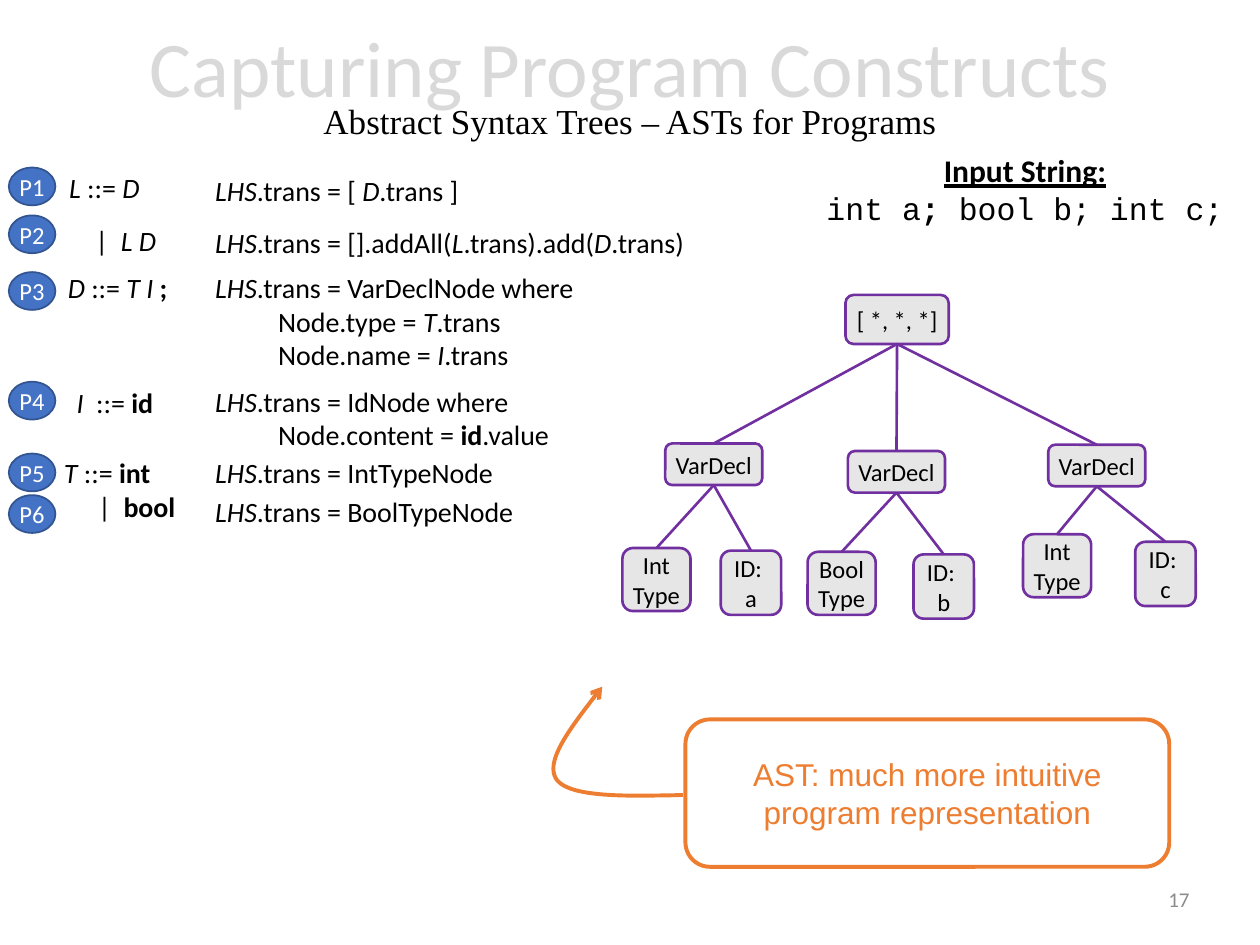
from pptx import Presentation
from pptx.dml.color import RGBColor
from pptx.enum.shapes import MSO_CONNECTOR, MSO_SHAPE
from pptx.enum.text import MSO_ANCHOR, PP_ALIGN
from pptx.oxml.ns import qn
from pptx.util import Inches, Pt
from lxml import etree

BLACK = RGBColor(0, 0, 0)
WHITE = RGBColor(255, 255, 255)
PALE = RGBColor(0xD9, 0xD9, 0xD9)
GRAY = RGBColor(0x8C, 0x8C, 0x8C)
SILVER = RGBColor(0xE7, 0xE6, 0xE6)
PURPLE = RGBColor(0x70, 0x30, 0xA0)
BLUE = RGBColor(0x44, 0x72, 0xC4)
NAVY = RGBColor(0x32, 0x54, 0x91)
ORANGE = RGBColor(0xED, 0x7D, 0x31)

LEFT, MID, RIGHT = PP_ALIGN.LEFT, PP_ALIGN.CENTER, PP_ALIGN.RIGHT
TOP, MIDDLE = MSO_ANCHOR.TOP, MSO_ANCHOR.MIDDLE
ROUND, OVAL = MSO_SHAPE.ROUNDED_RECTANGLE, MSO_SHAPE.OVAL
STRAIGHT = MSO_CONNECTOR.STRAIGHT

COLS, ROWS = 100, 75
CELL = Inches(0.1)

BADGES = [12, 15.8, 20.3, 29, 34.7, 38]
RULES = [
    (3.8, 12.1, "_L_ ::= _D_", 26),
    (5.9, 16.3, "|  _L D_", 26),
    (3.7, 21, "_D_ ::= _T I_~ ;~", None),
    (4.4, 30.1, "_I  _::= ~id~", None),
    (3.4, 35.7, "_T _::= ~int~\n>|  ~bool~", None),
]
ACTIONS = [
    (12.3, "[ _D_.trans ]", 26),
    (16.5, "[].addAll(_L_.trans).add(_D_.trans)", 26),
    (21, "VarDeclNode where\n>Node.type = _T_.trans\n>Node.name = _I_.trans", None),
    (30, "IdNode where\n>Node.content = ~id~.value", None),
    (35.7, "IntTypeNode", None),
    (38.8, "BoolTypeNode", None),
]
DECLS = [
    ((3.4, 11.8), ("Int", 0, 20.1), ("a", 7.8, 20.3)),
    ((17.9, 12.4), ("Bool", 14.7, 20.4), ("b", 23.1, 20.6)),
    ((33.8, 11.9), ("Int", 31.8, 19), ("c", 40.7, 19.6)),
]


def cells(*nums):
    """Turn grid counts into lengths."""
    return [round(n * CELL) for n in nums]


def write(frame, text, font="Calibri", size=16, color=BLACK, align=LEFT,
          bold=False, under=False, space=None, indent=0):
    """Append lines, with _italic_, ~bold~ and a leading > for an indent."""
    for line in text.split("\n"):
        par = frame.add_paragraph() if frame.text else frame.paragraphs[0]
        par.alignment = align
        if space:
            par.line_spacing = space
        if line.startswith(">"):
            line = line[1:]
            props = par._p.get_or_add_pPr()
            props.set("marL", str(round(indent * CELL)))
            props.set("indent", "0")
        for i, part in enumerate(line.split("_")):
            for j, bit in enumerate(part.split("~")):
                if bit:
                    run = par.add_run()
                    run.text = bit
                    run.font.name, run.font.size = font, Pt(size)
                    run.font.color.rgb = color
                    run.font.italic = i % 2 == 1
                    run.font.bold = bold or j % 2 == 1
                    run.font.underline = under


def label(slide, box, anchor=TOP):
    """Add a text box and return its frame."""
    frame = slide.shapes.add_textbox(*cells(*box)).text_frame
    frame.word_wrap = True
    frame.vertical_anchor = anchor
    return frame


def block(slide, kind, box, text, fill, edge, width, inset=None, **form):
    """Add a filled shape with centred text."""
    shape = slide.shapes.add_shape(kind, *cells(*box))
    shape.shadow.inherit = False
    shape.fill.solid()
    shape.fill.fore_color.rgb = fill
    shape.line.color.rgb = edge
    shape.line.width = Pt(width)
    frame = shape.text_frame
    frame.word_wrap = True
    frame.vertical_anchor = MIDDLE
    if inset is not None:
        frame.margin_left = frame.margin_right = Inches(inset)
        frame.margin_top = frame.margin_bottom = 0
    write(frame, text, align=MID, **form)
    return shape


def join(slide, upper, lower):
    """Link the bottom of one node to the top of another."""
    line = slide.shapes.add_connector(STRAIGHT, 0, 0, 0, 0)
    line.begin_connect(upper, 2)
    line.end_connect(lower, 0)
    line.line.color.rgb = PURPLE
    line.line.width = Pt(1.5)
    etree.SubElement(line._element.spPr, qn("a:effectLst"))


def title(slide, box):
    """Place the heading and its subtitle."""
    frame = label(slide, box, MIDDLE)
    write(frame, "Capturing Program Constructs", size=45, color=PALE,
          align=MID, space=0.7)
    write(frame, "Abstract Syntax Trees – ASTs for Programs",
          font="Times New Roman", size=20, align=MID, space=0.7)


def sample(slide, box):
    """Place the input string."""
    frame = label(slide, box)
    write(frame, "Input String:", size=18, align=MID, bold=True, under=True)
    write(frame, "int a~;~ bool b; int c;", font="Courier New", size=18,
          align=MID)


def rules(slide, box):
    """Place the numbered productions beside their translations."""
    x, y, w, h = box
    for num, row in enumerate(BADGES, 1):
        block(slide, OVAL, (x, y + row - 12 + 1.3, 3.7, 3), f"P{num}", BLUE,
              NAVY, 1, inset=0, size=14, color=WHITE)
    for col, row, text, space in RULES:
        frame = label(slide, (x + col, y + row - 12, 17, 4))
        write(frame, text, space=space and Pt(space), indent=2.7)
    for row, text, space in ACTIONS:
        frame = label(slide, (x + 15.4, y + row - 12, w - 15.4, 4))
        write(frame, "_LHS_.trans = " + text, space=space and Pt(space),
              indent=5)


def tree(slide, box):
    """Place the syntax tree and link its nodes."""
    x, y, w, h = box

    def node(col, row, wide, high, text):
        """Add one node."""
        return block(slide, ROUND, (x + col, y + row, wide, high), text,
                     SILVER, PURPLE, 1.5, inset=0.05, size=14)

    root = node(17.7, 0, 8.2, 3.9, "[ *, *, *]")
    for place, kind, name in DECLS:
        decl = node(*place, 7.7, 3.3, "VarDecl")
        join(slide, root, decl)
        join(slide, decl, node(*kind[1:], 5.4, 5, kind[0] + "\nType"))
        join(slide, decl, node(*name[1:], 4.8, 5.1, "ID: \n" + name[0]))


def bend(a, b, c, d, steps=24):
    """Return points along a cubic curve."""
    marks = [n / steps for n in range(1, steps + 1)]
    return [tuple((1 - t) ** 3 * p + 3 * t * (1 - t) ** 2 * q
                  + 3 * t * t * (1 - t) * r + t ** 3 * s
                  for p, q, r, s in zip(a, b, c, d)) for t in marks]


def callout(slide, box):
    """Place the remark and its curved arrow."""
    x, y, w, h = box
    block(slide, ROUND, box, "AST: much more intuitive program representation",
          WHITE, ORANGE, 2.25, font="Arial", size=18, color=ORANGE)
    knots = [(-0.2, 6), (-4.7, 6.1), (-9.1, 6.2), (-10.2, 4.8),
             (-11.3, 3.3), (-8.9, 0.4), (-6.6, -2.6)]
    knots = [(x + p, y + q) for p, q in knots]
    pen = slide.shapes.build_freeform(*cells(*knots[0]))
    points = bend(*knots[:4]) + bend(*knots[3:])
    pen.add_line_segments([cells(*p) for p in points], close=False)
    curve = pen.convert_to_shape()
    curve.shadow.inherit = False
    curve.fill.background()
    curve.line.color.rgb = ORANGE
    curve.line.width = Pt(2.25)
    etree.SubElement(curve.line._get_or_add_ln(), qn("a:tailEnd"), type="arrow")


def page(slide, box):
    """Place the page number."""
    write(label(slide, box, MIDDLE), "17", size=12, color=GRAY, align=RIGHT)


def main():
    """Build and save the slide."""
    deck = Presentation()
    deck.slide_width, deck.slide_height = cells(COLS, ROWS)
    slide = deck.slides.add_slide(deck.slide_layouts[6])
    page(slide, (72.1, 69.4, 23.3, 4))
    title(slide, (6.9, 0.1, 86.2, 14.5))
    sample(slide, (63.5, 11.5, 35.7, 7.1))
    rules(slide, (0.7, 12, 56, 31))
    tree(slide, (49.4, 23.4, 45.5, 25.7))
    callout(slide, (54.4, 57.1, 38.4, 11.7))
    deck.save("out.pptx")


if __name__ == "__main__":
    main()
